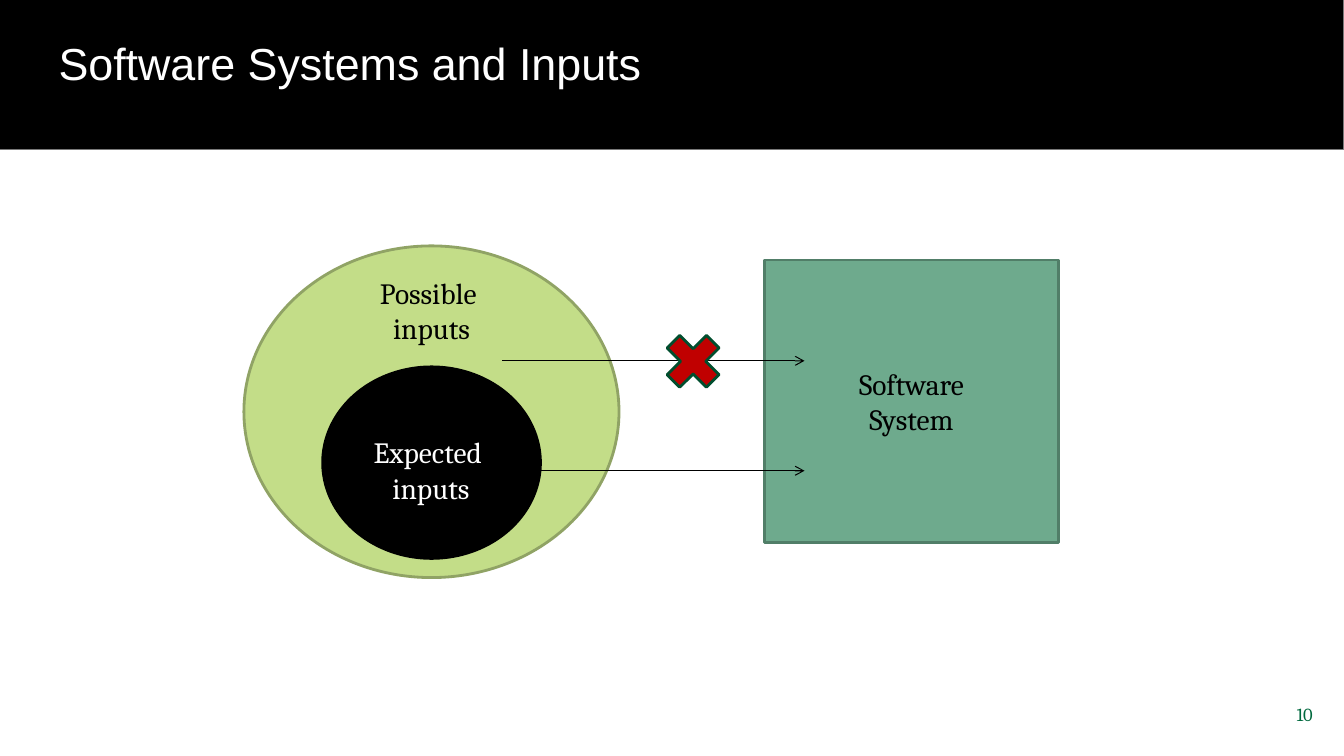
import pptx
import pptx.util
import pptx.dml.color
import pptx.enum.shapes
import pptx.enum.text
import pptx.oxml.ns
import lxml.etree

RGBColor = pptx.dml.color.RGBColor
SHAPE = pptx.enum.shapes.MSO_SHAPE
ALIGN = pptx.enum.text.PP_ALIGN
ANCHOR = pptx.enum.text.MSO_ANCHOR

BLACK = RGBColor(0x00, 0x00, 0x00)
WHITE = RGBColor(0xFF, 0xFF, 0xFF)
GREY = RGBColor(0x79, 0x79, 0x79)
TEAL = RGBColor(0x6E, 0xAA, 0x8D)
TEAL_EDGE = RGBColor(0x51, 0x7E, 0x68)
LIME = RGBColor(0xC3, 0xDD, 0x88)
LIME_EDGE = RGBColor(0x90, 0xA3, 0x65)
RED = RGBColor(0xC0, 0x00, 0x00)
DARK_GREEN = RGBColor(0x00, 0x4E, 0x2E)
NUMBER_GREEN = RGBColor(0x00, 0x69, 0x3E)


def write_text(frame, text, size=21, font="Cambria", color=BLACK,
               align=ALIGN.CENTER, anchor=ANCHOR.TOP, wrap=True,
               inset=None, spacing=None):
    frame.auto_size = pptx.enum.text.MSO_AUTO_SIZE.NONE
    frame.word_wrap = wrap
    frame.vertical_anchor = anchor
    if inset is not None:
        frame.margin_left = frame.margin_right = inset
        frame.margin_top = frame.margin_bottom = inset
    frame.text = text
    for paragraph in frame.paragraphs:
        paragraph.alignment = align
        paragraph.line_spacing = spacing
        for run in paragraph.runs:
            run.font.size = pptx.util.Pt(size)
            run.font.name = font
            run.font.color.rgb = color


class SlideBuilder:
    """Draws styled elements on one slide, placed in percent of its width and height."""

    inset = pptx.util.Inches(0.13)

    def __init__(self, presentation):
        self.column = presentation.slide_width / 100
        self.row = presentation.slide_height / 100
        self.slide = presentation.slides.add_slide(presentation.slide_layouts[5])

    def place(self, left, top, width, height):
        return (round(left * self.column), round(top * self.row),
                round(width * self.column), round(height * self.row))

    def title(self, text, box):
        title = self.slide.shapes.title
        title.left, title.top, title.width, title.height = self.place(*box)
        write_text(title.text_frame, text, size=32, font="Arial", color=WHITE,
                   align=ALIGN.LEFT, inset=self.inset, spacing=0.85)
        tree = self.slide.shapes._spTree
        tree.remove(title._element)
        tree.append(title._element)

    def shape(self, kind, box, fill, edge, weight=2, text=None):
        shape = self.slide.shapes.add_shape(kind, *self.place(*box))
        shape.shadow.inherit = False
        shape.fill.solid()
        shape.fill.fore_color.rgb = fill
        shape.line.color.rgb = edge
        shape.line.width = pptx.util.Pt(weight)
        if text:
            write_text(shape.text_frame, text, anchor=ANCHOR.MIDDLE)

    def label(self, text, box, **text_format):
        label = self.slide.shapes.add_textbox(*self.place(*box))
        write_text(label.text_frame, text, **text_format)

    def arrow(self, start, end, height):
        left, top, right, bottom = self.place(start, height, end, height)
        arrow = self.slide.shapes.add_connector(
            pptx.enum.shapes.MSO_CONNECTOR.STRAIGHT, left, top, right, bottom)
        arrow.line.color.rgb = BLACK
        arrow.line.width = pptx.util.Pt(0.75)
        qualified = pptx.oxml.ns.qn
        lxml.etree.SubElement(arrow.line._get_or_add_ln(),
                              qualified("a:tailEnd"), type="arrow")
        lxml.etree.SubElement(arrow._element.spPr, qualified("a:effectLst"))


def main():
    presentation = pptx.Presentation()
    presentation.slide_width = pptx.util.Inches(13.33)
    presentation.slide_height = pptx.util.Inches(7.5)
    builder = SlideBuilder(presentation)

    builder.shape(SHAPE.RECTANGLE, (56.86, 34.4, 21.91, 37.33), TEAL, TEAL_EDGE,
                  text="Software\nSystem")
    builder.shape(SHAPE.RECTANGLE, (0, -0.4, 100, 20.13), BLACK, GREY, weight=0.75)
    builder.title("Software Systems and Inputs", (3.38, 4.13, 93.17, 11.2))
    builder.label("10", (92.65, 90.67, 6, 7.6), size=13.2, color=NUMBER_GREEN,
                  align=ALIGN.RIGHT, anchor=ANCHOR.MIDDLE, inset=builder.inset)

    builder.shape(SHAPE.OVAL, (18.15, 32.53, 27.91, 43.87), LIME, LIME_EDGE)
    builder.shape(SHAPE.OVAL, (24.01, 48.53, 16.2, 25.33), BLACK, BLACK)
    builder.label("Possible \ninputs", (27.23, 35.73, 9.75, 10.8), wrap=False)
    builder.label("Expected \ninputs", (26.78, 56.8, 10.58, 10.8),
                  color=WHITE, wrap=False)

    for height in (62.27, 47.73):
        builder.arrow(37.36, 59.86, height)
    builder.shape(SHAPE.MATH_MULTIPLY, (48.76, 42.8, 5.63, 10), RED, DARK_GREEN)

    presentation.save("out.pptx")


if __name__ == "__main__":
    main()
